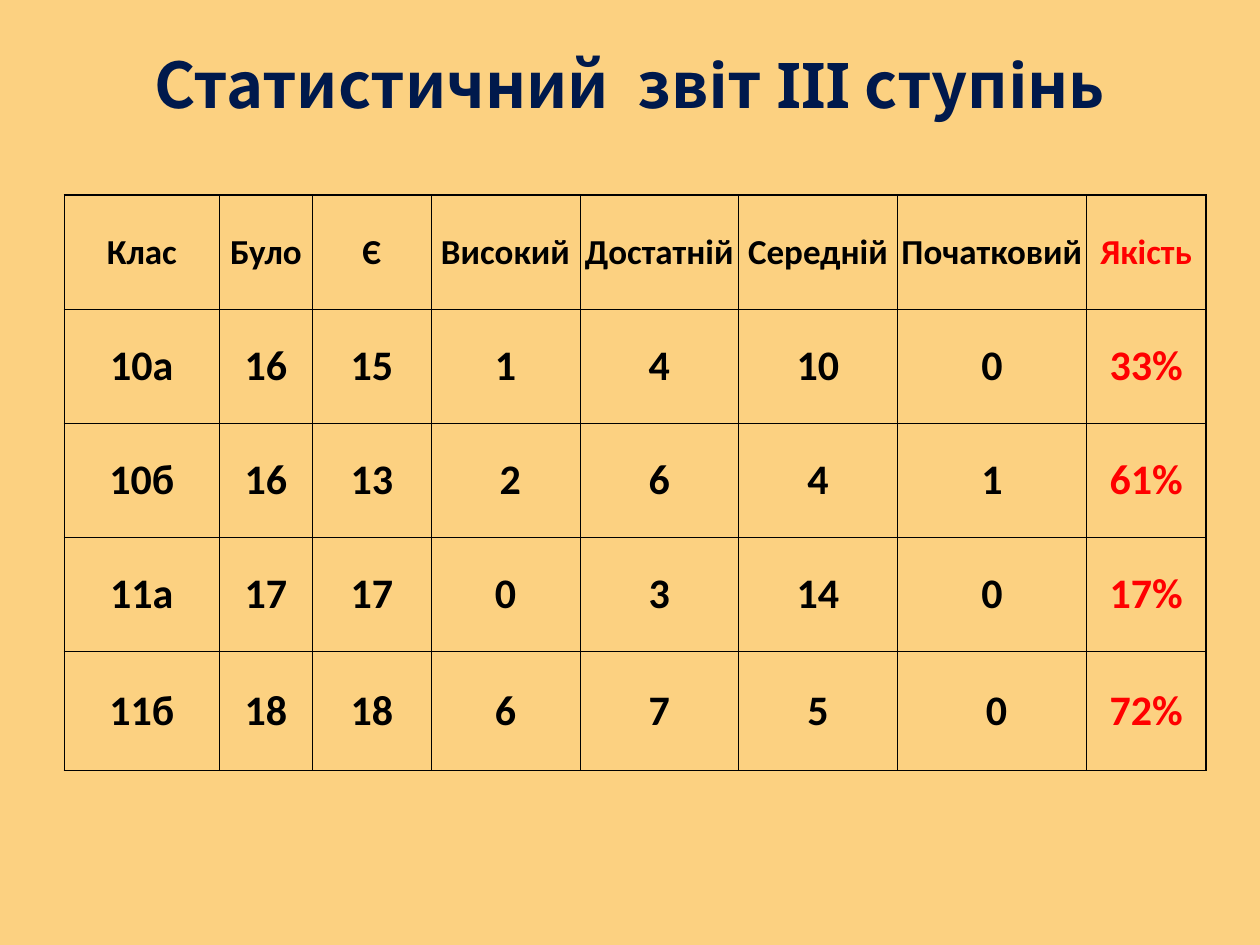
from lxml.etree import SubElement
from pptx import Presentation
from pptx.dml.color import RGBColor
from pptx.enum.text import MSO_ANCHOR, PP_ALIGN
from pptx.oxml.ns import qn
from pptx.util import Cm, Pt

BLACK, RED, NAVY, SAND = "000000", "FF0000", "00194C", "FCD181"
COL_WIDTHS = [3.12, 1.88, 2.39, 3, 3.2, 3.2, 3.81, 2.41]
ROW_HEIGHTS = [2.3, 2.3, 2.3, 2.3, 2.41]
REPORT = [
    ["Клас", "Було", "Є", "Високий", "Достатній", "Середній", "Початковий", "Якість"],
    ["10а", "16", "15", "1", "4", "10", "0", "33%"],
    ["10б", "16", "13", " 2", "6", "4", "1", "61%"],
    ["11а", "17", "17", "0", "3", "14", "0", "17%"],
    ["11б", "18", "18", "6", "7", "5", " 0", "72%"],
]


def rgb(value):
    """Turn a hex string into a colour."""
    return RGBColor.from_string(value)


def set_text(tf, text, font, size, color):
    """Write one centred bold paragraph."""
    p = tf.paragraphs[0]
    p.text = text
    p.alignment = PP_ALIGN.CENTER
    p.font.name = font
    p.font.size = Pt(size)
    p.font.bold = True
    p.font.color.rgb = rgb(color)


def add_title(s, text):
    """Add the heading across the slide."""
    tf = s.shapes.add_textbox(0, Cm(0.64), Cm(25.4), Cm(2.1)).text_frame
    tf.word_wrap = True
    tf.vertical_anchor = MSO_ANCHOR.MIDDLE
    set_text(tf, text, "Noto Sans CJK KR", 36, NAVY)


def set_borders(cell, widths):
    """Draw black borders from widths in points keyed by side."""
    tcPr = cell._tc.get_or_add_tcPr()
    for i, (side, width) in enumerate(widths.items()):
        ln = SubElement(tcPr, qn(f"a:ln{side}"), w=str(Pt(width)))
        SubElement(SubElement(ln, qn("a:solidFill")), qn("a:srgbClr"), val=BLACK)
        tcPr.insert(i, ln)


def add_report(s, rows):
    """Add the grade table with a heavier frame and last column."""
    last_row, last_col = len(rows) - 1, len(COL_WIDTHS) - 1
    table = s.shapes.add_table(
        len(rows), len(COL_WIDTHS), Cm(1.3), Cm(3.93),
        Cm(sum(COL_WIDTHS)), Cm(sum(ROW_HEIGHTS))).table
    table.first_row = table.horz_banding = False
    for col, width in zip(table.columns, COL_WIDTHS):
        col.width = Cm(width)
    for r, (values, height) in enumerate(zip(rows, ROW_HEIGHTS)):
        table.rows[r].height = Cm(height)
        for c, value in enumerate(values):
            cell = table.cell(r, c)
            cell.fill.background()
            cell.vertical_anchor = MSO_ANCHOR.MIDDLE
            cell.margin_left = cell.margin_right = cell.margin_top = Cm(0.02)
            cell.margin_bottom = 0
            set_text(cell.text_frame, value, "Calibri", 24 if r else 20,
                     RED if c == last_col else BLACK)
            set_borders(cell, {
                "L": 1 if c in (0, last_col) else 0.5,
                "R": 1 if c >= last_col - 1 else 0.5,
                "T": 1 if r == 0 else 0.5,
                "B": 1 if r == last_row else 0.5,
            })


def main():
    """Build the slide and save it."""
    prs = Presentation()
    prs.slide_width, prs.slide_height = Cm(25.4), Cm(19.05)
    s = prs.slides.add_slide(prs.slide_layouts[6])
    s.background.fill.solid()
    s.background.fill.fore_color.rgb = rgb(SAND)
    add_title(s, "Статистичний  звіт ІІІ ступінь")
    add_report(s, REPORT)
    prs.save("out.pptx")


if __name__ == "__main__":
    main()
